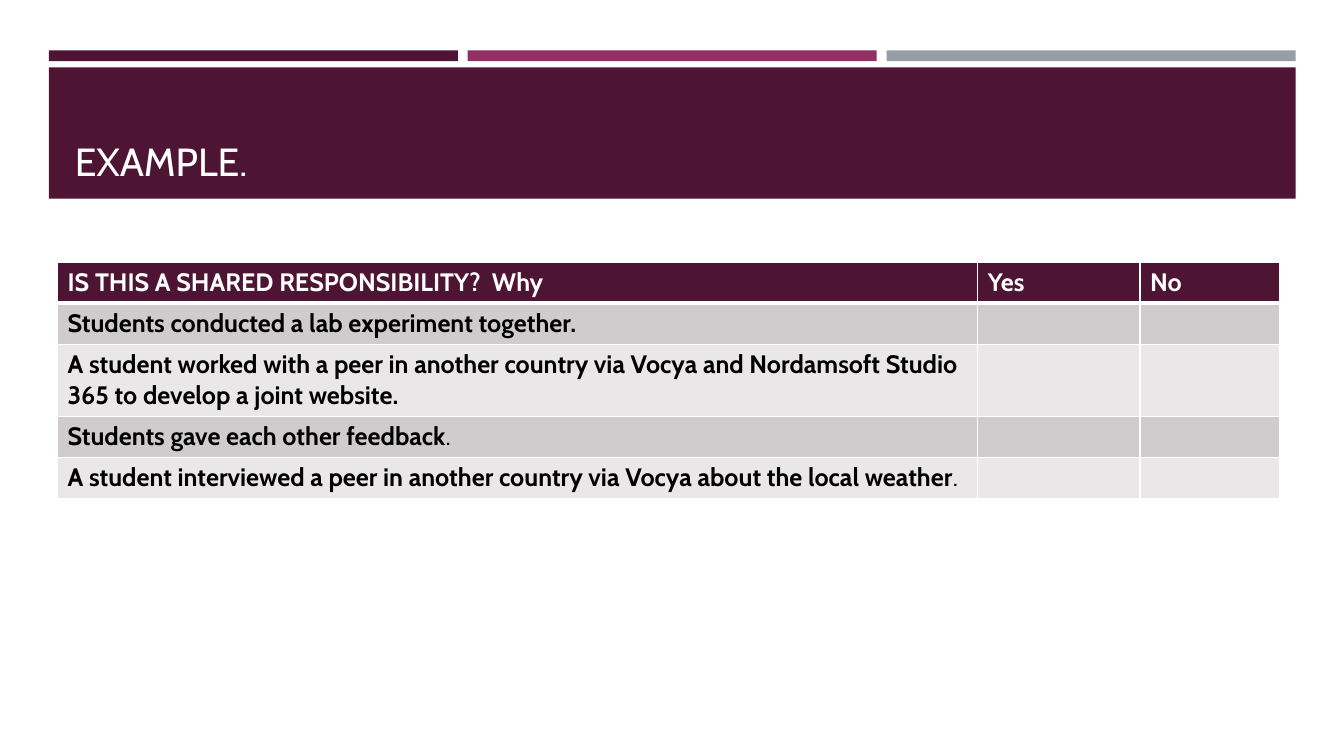
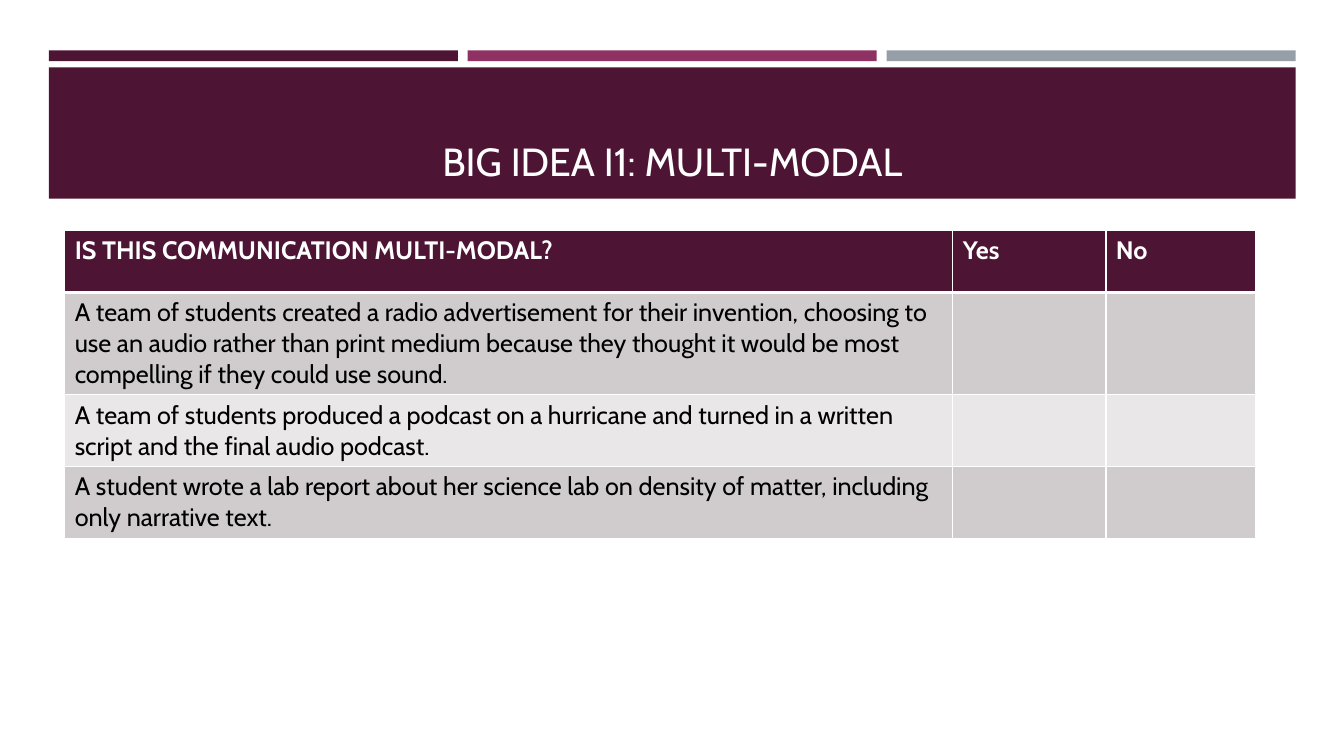
import pptx
import pptx.dml.color
import pptx.enum.shapes
import pptx.enum.text
import pptx.oxml.ns
import pptx.util
from lxml import etree

Cm = pptx.util.Cm
Pt = pptx.util.Pt
ALIGN = pptx.enum.text.PP_ALIGN

FONT = "Cabin"
PLUM, MAGENTA, GREY = "4D1434", "903163", "969FA7"
WHITE, BLACK = "FFFFFF", "000000"
ROW_FILLS = ("D0CCCE", "E9E7E8")
TITLE_STYLE = {"name": FONT, "size": Pt(28), "bold": False}
CELL_STYLE = {"name": FONT, "size": Pt(18)}


def rgb(value):
    return pptx.dml.color.RGBColor.from_string(value)


def style_font(font, formats, color):
    for attribute, value in formats.items():
        setattr(font, attribute, value)
    font.color.rgb = rgb(color)


def add_band(slide, box, color):
    band = slide.shapes.add_shape(
        pptx.enum.shapes.MSO_SHAPE.RECTANGLE, *(Cm(length) for length in box))
    band.shadow.inherit = False
    band.fill.solid()
    band.fill.fore_color.rgb = rgb(color)
    band.line.fill.background()


def add_header(slide, box, heading, align):
    """Three thin strips above a title band, all inside the box."""
    left, top, width, height = box
    gap, strip_height, band_offset = 0.25, 0.27, 0.43
    strip_width = (width - 2 * gap) / 3
    for index, color in enumerate((PLUM, MAGENTA, GREY)):
        strip_left = left + index * (strip_width + gap)
        add_band(slide, (strip_left, top, strip_width, strip_height), color)
    add_band(slide, (left, top + band_offset, width, height - band_offset), PLUM)

    # Title, brought in front of its band
    title = slide.shapes.title
    placement = {"left": left + 0.4, "top": top + 0.69,
                 "width": width - 0.8, "height": 2.82}
    for attribute, length in placement.items():
        setattr(title, attribute, Cm(length))
    title.element.getparent().append(title.element)
    frame = title.text_frame
    frame.text = heading
    frame.word_wrap = True
    frame.auto_size = pptx.enum.text.MSO_AUTO_SIZE.NONE
    frame.vertical_anchor = pptx.enum.text.MSO_ANCHOR.BOTTOM
    frame.paragraphs[0].alignment = align
    style_font(frame.paragraphs[0].runs[0].font, TITLE_STYLE, WHITE)


def set_borders(cell, widths):
    properties = cell._tc.get_or_add_tcPr()
    for side, points in widths.items():
        line = etree.SubElement(properties, pptx.oxml.ns.qn(f"a:ln{side}"),
                                w=str(Pt(points)))
        fill = etree.SubElement(line, pptx.oxml.ns.qn("a:solidFill"))
        etree.SubElement(fill, pptx.oxml.ns.qn("a:srgbClr"), val=WHITE)


def add_checklist(slide, left, top, column_widths, row_height, question, statements):
    """Question table; each statement is a (bold part, plain part) pair."""
    rows = [[(question, ""), ("Yes", ""), ("No", "")]]
    rows += [[statement, ("", ""), ("", "")] for statement in statements]
    checklist = slide.shapes.add_table(
        len(rows), len(column_widths), Cm(left), Cm(top),
        Cm(sum(column_widths)), Cm(row_height * len(rows))).table
    for column, width in zip(checklist.columns, column_widths):
        column.width = Cm(width)

    for row_index, row in enumerate(rows):
        checklist.rows[row_index].height = Cm(row_height)
        is_header = row_index == 0
        fill = PLUM if is_header else ROW_FILLS[(row_index - 1) % 2]
        above = 3 if row_index == 1 else 1
        below = 3 if is_header else 1
        for column_index, parts in enumerate(row):
            cell = checklist.cell(row_index, column_index)
            set_borders(cell, {"L": 1, "R": 1, "T": above, "B": below})
            cell.fill.solid()
            cell.fill.fore_color.rgb = rgb(fill)
            paragraph = cell.text_frame.paragraphs[0]
            style_font(paragraph.font, CELL_STYLE, BLACK)
            for wording, bold in zip(parts, (True, False)):
                if wording:
                    run = paragraph.add_run()
                    run.text = wording
                    style_font(run.font, {**CELL_STYLE, "bold": bold},
                               WHITE if is_header else BLACK)


SLIDES = [
    {
        "heading": "EXAMPLE.",
        "align": ALIGN.LEFT,
        "checklist": {
            "left": 1.45, "top": 6.6,
            "column_widths": (23.19, 4.09, 3.51), "row_height": 1.04,
            "question": "IS THIS A SHARED RESPONSIBILITY?  Why",
            "statements": [
                ("Students conducted a lab experiment together.", ""),
                ("A student worked with a peer in another country via Vocya and "
                 "Nordamsoft Studio 365 to develop a joint website.", ""),
                ("Students gave each other feedback", "."),
                ("A student interviewed a peer in another country via Vocya "
                 "about the local weather", "."),
            ],
        },
    },
    {
        "heading": "BIG IDEA I1: MULTI-MODAL",
        "align": ALIGN.CENTER,
        "checklist": {
            "left": 1.63, "top": 5.8,
            "column_widths": (22.38, 3.86, 3.76), "row_height": 1.57,
            "question": "IS THIS COMMUNICATION MULTI-MODAL?",
            "statements": [
                ("", "A team of students created a radio advertisement for their "
                 "invention, choosing to use an audio rather than print medium "
                 "because they thought it would be most compelling if they could "
                 "use sound."),
                ("", "A team of students produced a podcast on a hurricane and "
                 "turned in a written script and the final audio podcast."),
                ("", "A student wrote a lab report about her science lab on "
                 "density of matter, including only narrative text."),
            ],
        },
    },
]


def main():
    deck = pptx.Presentation()
    deck.slide_width, deck.slide_height = Cm(33.87), Cm(19.05)
    title_only = deck.slide_layouts[5]
    for content in SLIDES:
        slide = deck.slides.add_slide(title_only)
        add_header(slide, (1.23, 1.27, 31.42, 3.74),
                   content["heading"], content["align"])
        add_checklist(slide, **content["checklist"])
    deck.save("out.pptx")


if __name__ == "__main__":
    main()
